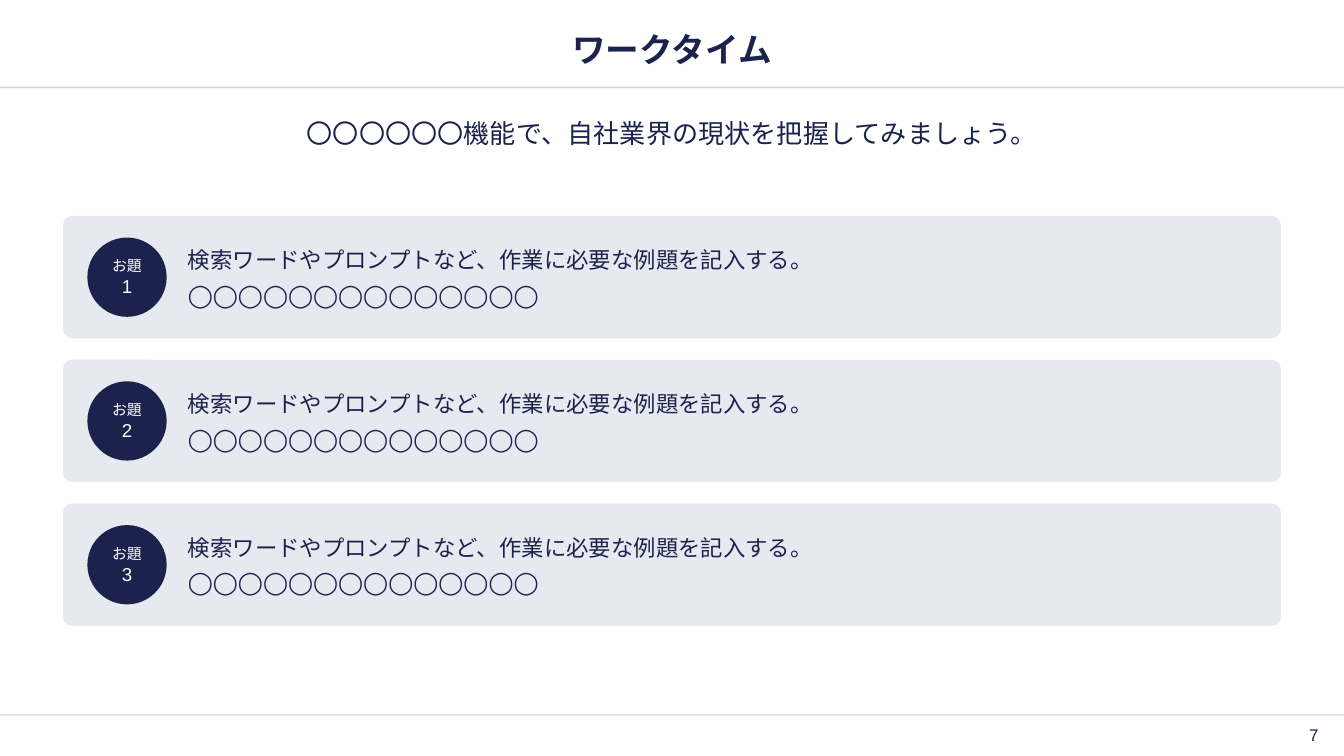
from lxml.etree import SubElement
from pptx import Presentation
from pptx.dml.color import RGBColor
from pptx.enum.shapes import MSO_CONNECTOR as Link, MSO_SHAPE as Kind
from pptx.enum.text import MSO_ANCHOR as Anchor, PP_ALIGN as Align
from pptx.oxml.ns import qn
from pptx.util import Inches, Pt

NAVY = RGBColor(0x1B, 0x22, 0x4C)
PALE = RGBColor(0xE6, 0xEA, 0xF0)
WHITE = RGBColor(0xFF, 0xFF, 0xFF)
FONT = "Arial"

TITLE = "ワークタイム"
LEAD = "〇〇〇〇〇〇機能で、自社業界の現状を把握してみましょう。"
PAGE = "7"
LABEL = "お題"
TASK = "検索ワードやプロンプトなど、作業に必要な例題を記入する。"
BLANK = "◯" * 14
TASKS = [(TASK, BLANK)] * 3

WIDE = 10
HIGH = WIDE * 9 / 16
RULES = (0.65, 5.32)
EDGE = 0.47
SPAN = WIDE - 2 * EDGE
TOP, STEP, CARD = HIGH * 2 / 7, 1.07, 0.91
DOT, DOT_X = 0.59, 0.65
PAD = 0.04

deck = Presentation()
deck.slide_width, deck.slide_height = Inches(WIDE), Inches(HIGH)
slide = deck.slides.add_slide(deck.slide_layouts[6])
shapes = slide.shapes


def write(shape, lines, color, align, insets, anchor=Anchor.MIDDLE, gap=0):
    """Fill a shape with (text, size, bold) lines, gap points apart."""
    frame = shape.text_frame
    frame.word_wrap = True
    frame.vertical_anchor = anchor
    (frame.margin_left, frame.margin_top,
     frame.margin_right, frame.margin_bottom) = map(Inches, insets)
    for i, (text, size, bold) in enumerate(lines):
        para = frame.paragraphs[0] if i == 0 else frame.add_paragraph()
        para.text = text
        para.alignment = align
        if i and gap:
            para.space_before = Pt(gap)
        font = para.font
        font.name, font.size, font.bold = FONT, Pt(size), bold
        font.color.rgb = color


def label(box, text, size, align, anchor=Anchor.MIDDLE, bold=False):
    shape = shapes.add_textbox(*map(Inches, box))
    write(shape, [(text, size, bold)], NAVY, align, [PAD] * 4, anchor)


def solid(kind, box, fill):
    shape = shapes.add_shape(kind, *map(Inches, box))
    shape.shadow.inherit = False
    shape.fill.solid()
    shape.fill.fore_color.rgb = fill
    shape.line.fill.background()
    return shape


def rule(y):
    """Draw a faint line across the slide."""
    line = shapes.add_connector(
        Link.STRAIGHT, 0, Inches(y), Inches(WIDE), Inches(y))
    line.line.width = Pt(0.75)
    line.line.color.rgb = NAVY
    props = line.element.spPr
    SubElement(next(props.iter(qn("a:srgbClr"))), qn("a:alpha"), val="20000")
    SubElement(props, qn("a:effectLst"))


for y in RULES:
    rule(y)

label((EDGE, 0.17, SPAN, 0.39), TITLE, 18, Align.CENTER, bold=True)
label((EDGE, 0.83, SPAN, 0.63), LEAD, 14, Align.CENTER, Anchor.TOP)
label((9.46, 5.37, 0.39, 0.2), PAGE, 9, Align.RIGHT)

for i, task in enumerate(TASKS):
    y = TOP + i * STEP
    card = solid(Kind.ROUNDED_RECTANGLE, (EDGE, y, SPAN, CARD), PALE)
    card.adjustments[0] = 0.07
    write(card, [(text, 12, False) for text in task], NAVY, Align.LEFT,
          (0.91, 0.08, 0.08, 0.08), gap=4)
    dot = solid(Kind.OVAL, (DOT_X, y + (CARD - DOT) / 2, DOT, DOT), NAVY)
    write(dot, [(LABEL, 8, False), (str(i + 1), 10, False)], WHITE,
          Align.CENTER, [0] * 4)

deck.save("out.pptx")
